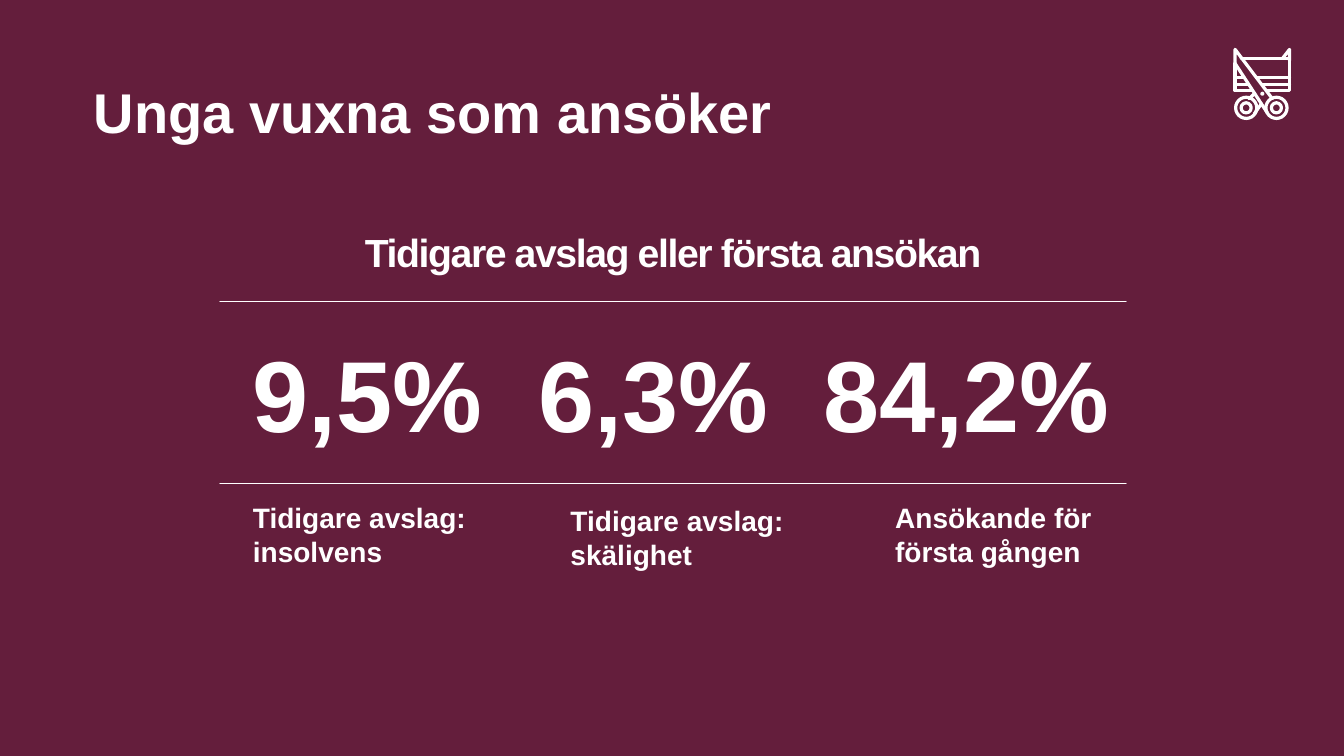
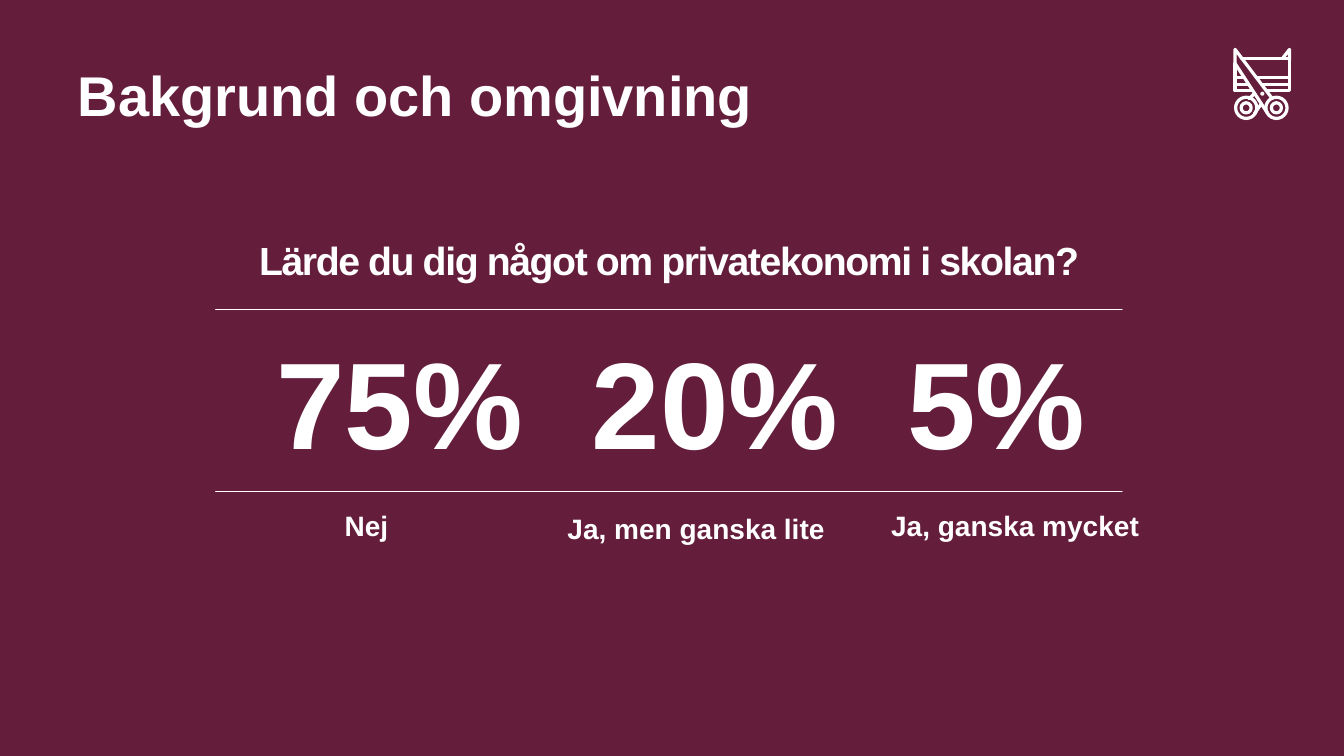
import pptx
import pptx.dml.color
import pptx.enum.dml
import pptx.enum.shapes
import pptx.enum.text
import pptx.oxml
import pptx.oxml.ns
import pptx.util
from lxml import etree

Inches = pptx.util.Inches
Pt = pptx.util.Pt
qn = pptx.oxml.ns.qn
Align = pptx.enum.text.PP_ALIGN
Anchor = pptx.enum.text.MSO_ANCHOR

WINE, WHITE = "641E3C", "FFFFFF"
FONT = {"name": "Arial", "bold": True}
ICON_WIDTH = 2.3

# Block geometry, relative to the left end of the upper rule
RULE_LENGTH = 8.99
RULE_GAP = 1.81

SLIDES = [
    {
        "title": "Unga vuxna som ansöker", "title_at": (0.83, 0.47, 11.88, 1.02),
        "origin": (2.18, 2.99),
        "heading": "Tidigare avslag eller första ansökan",
        "figures": ["9,5%", "6,3%", "84,2%"], "figures_at": (0.23, 0.25, 8.74, 1.31),
        "size": 72, "pitch": 2.83,
        "labels": [("Tidigare avslag: insolvens", 0.23, 1.93, 2.52),
                   ("Tidigare avslag: skälighet", 3.38, 1.96, 2.78),
                   ("Ansökande för första gången", 6.6, 1.93, 2.69)],
        "label_height": 0.77,
    },
    {
        "title": "Bakgrund och omgivning", "title_at": (0.67, 0.3, 11.94, 1.02),
        "origin": (2.14, 3.07),
        "heading": "Lärde du dig något om privatekonomi i skolan?",
        "figures": ["75%", "20%", "5%"], "figures_at": (0.5, 0.12, 8.26, 1.58),
        "size": 88, "pitch": 3.13,
        "labels": [("Nej", 1.18, 1.93, 1.1),
                   ("Ja, men ganska lite", 3.39, 1.96, 2.78),
                   ("Ja, ganska mycket", 6.6, 1.93, 2.69)],
        "label_height": 0.44,
    },
]

# Icon of a card cut by scissors: centre lines of its strokes
CARD_AND_BLADES = [
    [(12.31, 0.58), (12.79, 0.58), (12.79, 0.9), (12.57, 0.9)],
    [(12.25, 0.63), (12.25, 0.9), (12.42, 0.9)],
    [(12.25, 0.77), (12.33, 0.77)],
    [(12.25, 0.84), (12.38, 0.84)],
    [(12.47, 0.77), (12.79, 0.77)],
    [(12.52, 0.84), (12.79, 0.84)],
    [(12.57, 1.12), (12.25, 0.63), (12.25, 0.49), (12.62, 0.98)],
    [(12.39, 0.98), (12.44, 0.93)],
    [(12.51, 1.03), (12.44, 1.13)],
    [(12.72, 0.58), (12.79, 0.49), (12.79, 0.6)],
]
HANDLE_CENTRES = [12.36, 12.66]
HANDLE_Y = 1.07
RING_DIAMETERS = [0.21, 0.1]


def rgb(value):
    return pptx.dml.color.RGBColor.from_string(value)


def put_text(shape, text, size, align=Align.LEFT, anchor=Anchor.TOP):
    frame = shape.text_frame
    for name, value in {"word_wrap": True, "vertical_anchor": anchor,
                        "auto_size": pptx.enum.text.MSO_AUTO_SIZE.NONE}.items():
        setattr(frame, name, value)
    paragraph = frame.paragraphs[0]
    paragraph.alignment = align
    run = paragraph.add_run()
    run.text = text
    for name, value in {**FONT, "size": Pt(size)}.items():
        setattr(run.font, name, value)
    run.font.color.rgb = rgb(WHITE)
    return paragraph


presentation = pptx.Presentation()
presentation.slide_width = Inches(13.33)
presentation.slide_height = Inches(7.5)

# Shared background
background = presentation.slide_master.background.fill
background.solid()
background.fore_color.rgb = rgb(WINE)

for content in SLIDES:
    slide = presentation.slides.add_slide(presentation.slide_layouts[5])
    shapes = slide.shapes
    left, top = content["origin"]

    # Title
    title = shapes.title
    for name, value in zip(("left", "top", "width", "height"), content["title_at"]):
        setattr(title, name, Inches(value))
    put_text(title, content["title"], 40, anchor=Anchor.BOTTOM)

    # Heading
    box = shapes.add_textbox(Inches(left), Inches(top - 0.81), Inches(RULE_LENGTH), Inches(0.6))
    paragraph = put_text(box, content["heading"], 28, Align.CENTER, Anchor.BOTTOM)
    paragraph.runs[0]._r.get_or_add_rPr().set("spc", "-100")

    # Rules above and below the figures
    straight = pptx.enum.shapes.MSO_CONNECTOR.STRAIGHT
    strokes = []
    for y in (top, top + RULE_GAP):
        rule = shapes.add_connector(straight, Inches(left), Inches(y),
                                    Inches(left + RULE_LENGTH), Inches(y))
        strokes.append((rule, 0.75))

    # Figures on evenly spaced tab stops
    x, y, width, height = content["figures_at"]
    box = shapes.add_textbox(Inches(left + x), Inches(top + y), Inches(width), Inches(height))
    paragraph = put_text(box, "\t".join(content["figures"]), content["size"])
    tabs = etree.SubElement(paragraph._p.get_or_add_pPr(), qn("a:tabLst"))
    for column in range(1, len(content["figures"])):
        etree.SubElement(tabs, qn("a:tab"), pos=str(Inches(column * content["pitch"])), algn="l")

    # Labels
    for text, x, y, width in content["labels"]:
        box = shapes.add_textbox(Inches(left + x), Inches(top + y),
                                 Inches(width), Inches(content["label_height"]))
        put_text(box, text, 20)

    # Icon: card and blades
    for points in CARD_AND_BLADES:
        points = [(Inches(x), Inches(y)) for x, y in points]
        if len(points) == 2:
            stroke = shapes.add_connector(straight, *points[0], *points[1])
        else:
            builder = shapes.build_freeform(*points[0])
            builder.add_line_segments(points[1:], close=False)
            stroke = builder.convert_to_shape()
            stroke.fill.background()
        strokes.append((stroke, ICON_WIDTH))

    # Icon: handles and pivot
    oval = pptx.enum.shapes.MSO_SHAPE.OVAL
    for centre in HANDLE_CENTRES:
        for diameter in RING_DIAMETERS:
            ring = shapes.add_shape(oval, Inches(centre - diameter / 2),
                                    Inches(HANDLE_Y - diameter / 2),
                                    Inches(diameter), Inches(diameter))
            ring.fill.background()
            strokes.append((ring, ICON_WIDTH))
    pivot = shapes.add_shape(oval, Inches(12.5), Inches(0.91), Inches(0.04), Inches(0.04))
    pivot.shadow.inherit = False
    pivot.fill.solid()
    pivot.fill.fore_color.rgb = rgb(WHITE)
    pivot.line.fill.background()

    # Line style of rules and icon
    for stroke, weight in strokes:
        stroke.line.color.rgb = rgb(WHITE)
        stroke.line.width = Pt(weight)
        properties = stroke._element.spPr
        outline = properties.find(qn("a:ln"))
        outline.set("cap", "rnd")
        etree.SubElement(outline, qn("a:round"))
        etree.SubElement(properties, qn("a:effectLst"))

presentation.save("out.pptx")
